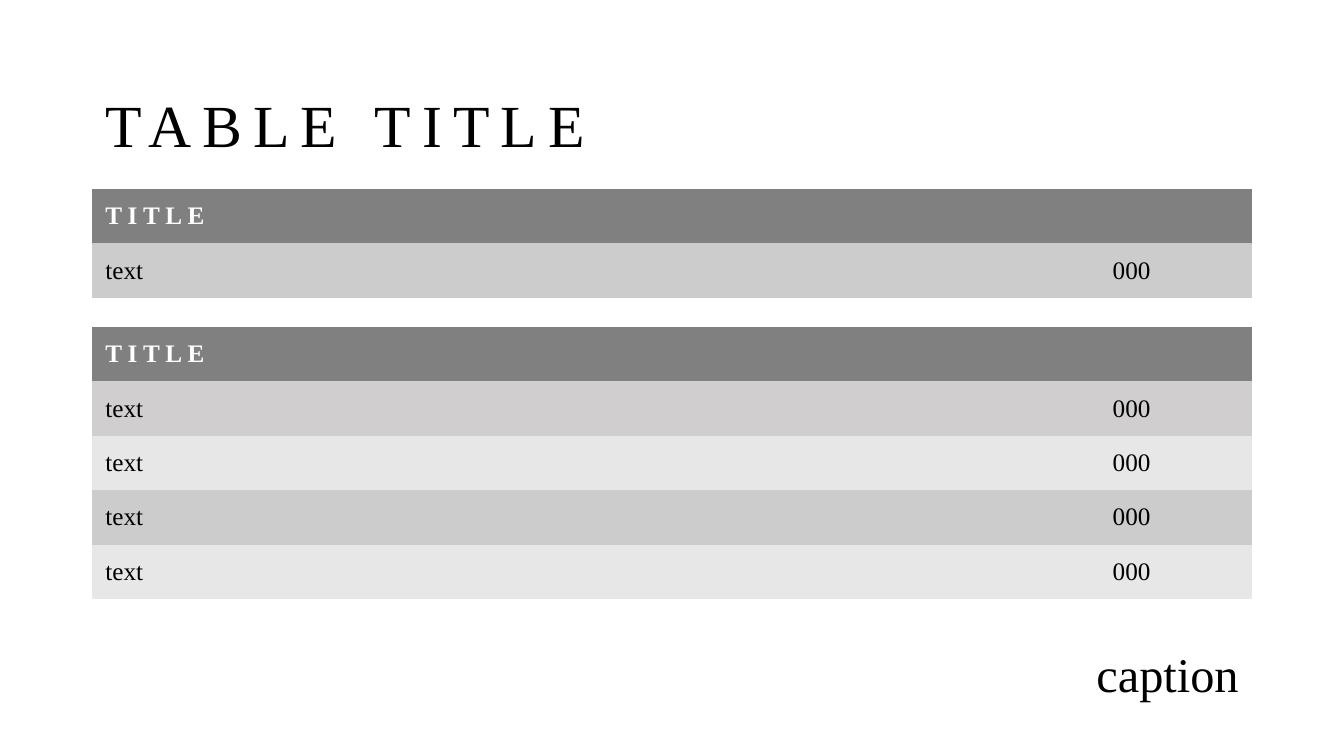
from pptx import Presentation
from pptx import util as u
from pptx.dml.color import RGBColor
from pptx.enum import text
from pptx.oxml.ns import qn

PLAIN_TABLE = "{2D5ABB26-0587-4C30-8999-92F81FD0307C}"
HEADER, GRAY, WARM, LIGHT = "808080", "CCCCCC", "D0CECE", "E7E7E7"


def px(n):
    return u.Emu(round(n * 914400 / 134.4))


def color(value):
    return RGBColor.from_string(value)


class Deck:
    font = "Times New Roman"
    ink, paper = "000000", "FFFFFF"
    cell_size = 13.5

    def __init__(self, width, height):
        self.prs = Presentation()
        self.prs.slide_width, self.prs.slide_height = px(width), px(height)
        self.s = self.prs.slides.add_slide(self.prs.slide_layouts[6])

    def set_text(self, tf, words, size, fill=ink, bold=False, spacing=0,
                 align=text.PP_ALIGN.LEFT, line=None, small_caps=False):
        p = tf.paragraphs[0]
        p.text = words
        p.alignment = align
        if line:
            p.line_spacing = line
        for r in p.runs:
            r.font.name = self.font
            r.font.size = u.Pt(size)
            r.font.bold = bold
            r.font.color.rgb = color(fill)
            props = r.font._element
            if spacing:
                props.set("spc", str(spacing * 100))
            if small_caps:
                props.set("cap", "small")

    def textbox(self, x, y, w, h, words, size, anchor, **style):
        tf = self.s.shapes.add_textbox(px(x), px(y), px(w), px(h)).text_frame
        tf.word_wrap = True
        tf.vertical_anchor = anchor
        self.set_text(tf, words, size, **style)

    def table(self, x, y, h, columns, heading, rows):
        count = len(rows) + 1
        table = self.s.shapes.add_table(
            count, len(columns), px(x), px(y), px(sum(columns)), px(h)).table
        table.horz_banding = False
        table._tbl.tblPr.find(qn("a:tableStyleId")).text = PLAIN_TABLE
        for column, width in zip(table.columns, columns):
            column.width = px(width)
        for row in table.rows:
            row.height = px(h / count)

        # Heading row, then label and value rows
        self.cell(table.cell(0, 0), heading, HEADER,
                  fill=self.paper, bold=True, spacing=3)
        self.cell(table.cell(0, 1), "", HEADER)
        for i, (label, value, back) in enumerate(rows, 1):
            self.cell(table.cell(i, 0), label, back)
            self.cell(table.cell(i, 1), value, back,
                      align=text.PP_ALIGN.CENTER)

    def cell(self, cell, words, back, **style):
        cell.fill.solid()
        cell.fill.fore_color.rgb = color(back)
        cell.vertical_anchor = text.MSO_ANCHOR.MIDDLE
        self.set_text(cell.text_frame, words, self.cell_size, **style)


def main():
    deck = Deck(1344, 756)
    left, columns = 92, (919, 241)

    # Title
    deck.textbox(left, 54, sum(columns), 133, "table title", 40,
                 text.MSO_ANCHOR.MIDDLE, spacing=6, line=u.Pt(45),
                 small_caps=True)

    # Caption
    deck.textbox(430, 648, 822, 46, "caption", 25.9, text.MSO_ANCHOR.TOP,
                 align=text.PP_ALIGN.RIGHT, line=0.82)

    # Tables
    for y, h, backs in ((189, 109, (GRAY,)),
                        (327, 272, (WARM, LIGHT, GRAY, LIGHT))):
        deck.table(left, y, h, columns, "TITLE",
                   [("text", "000", back) for back in backs])

    deck.prs.save("out.pptx")


if __name__ == "__main__":
    main()
